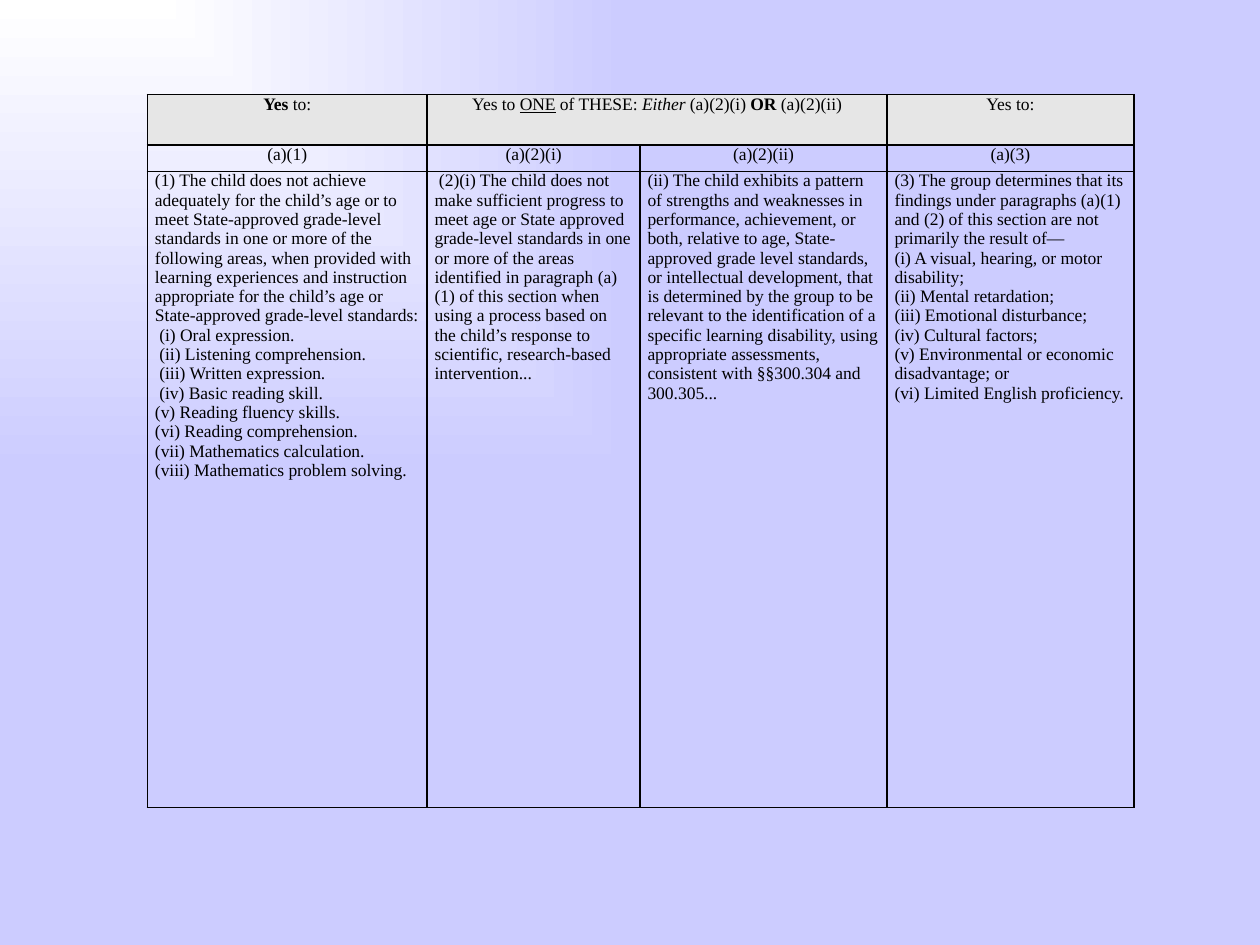
from dataclasses import dataclass

from pptx import Presentation
from pptx.dml.color import RGBColor
from pptx.enum.text import MSO_ANCHOR, PP_ALIGN
from pptx.oxml import parse_xml
from pptx.util import Inches, Pt

CENTER, LEFT = PP_ALIGN.CENTER, PP_ALIGN.LEFT
TOP = MSO_ANCHOR.TOP
NS = 'xmlns:a="http://schemas.openxmlformats.org/drawingml/2006/main"'
NS_P = 'xmlns:p="http://schemas.openxmlformats.org/presentationml/2006/main"'


@dataclass(frozen=True)
class Theme:
    font: str = "Times New Roman"
    size: float = 10
    text: str = "000000"
    border: str = "000000"
    border_pt: float = 1
    header: str = "E6E6E6"
    glow: str = "FFFFFF"
    back: str = "CCCCFF"


theme = Theme()


def add_text(p, text, bold=False, italic=False, underline=False):
    r = p.add_run()
    r.text = text
    f = r.font
    f.name, f.size = theme.font, Pt(theme.size)
    f.color.rgb = RGBColor.from_string(theme.text)
    f.bold, f.italic, f.underline = bold, italic, underline


def set_borders(cell):
    tcPr = cell._tc.get_or_add_tcPr()
    for i, side in enumerate("LRTB"):
        tcPr.insert(i, parse_xml(
            f'<a:ln{side} {NS} w="{Pt(theme.border_pt)}"><a:solidFill>'
            f'<a:srgbClr val="{theme.border}"/></a:solidFill></a:ln{side}>'))


# Each header is a list of (text, format) runs
headers = [
    [("Yes", {"bold": True}), (" to:", {})],
    [("Yes to ", {}), ("ONE", {"underline": True}), (" of THESE: ", {}),
     ("Either", {"italic": True}), (" (a)(2)(i) ", {}),
     ("OR", {"bold": True}), (" (a)(2)(ii)", {})],
    [],
    [("Yes to:", {})],
]
sections = ["(a)(1)", "(a)(2)(i)", "(a)(2)(ii)", "(a)(3)"]
criteria = [
    ["(1) The child does not achieve adequately for the child’s age or to meet "
     "State-approved grade-level standards in one or more of the following areas, "
     "when provided with learning experiences and instruction appropriate for the "
     "child’s age or State-approved grade-level standards:",
     " (i) Oral expression.",
     " (ii) Listening comprehension.",
     " (iii) Written expression.",
     " (iv) Basic reading skill.",
     "(v) Reading fluency skills.",
     "(vi) Reading comprehension.",
     "(vii) Mathematics calculation.",
     "(viii) Mathematics problem solving."],
    [" (2)(i) The child does not make sufficient progress to meet age or State "
     "approved grade-level standards in one or more of the areas identified in "
     "paragraph (a)(1) of this section when using a process based on the child’s "
     "response to scientific, research-based intervention..."],
    ["(ii) The child exhibits a pattern of strengths and weaknesses in performance, "
     "achievement, or both, relative to age, State-approved grade level standards, "
     "or intellectual development, that is determined by the group to be relevant "
     "to the identification of a specific learning disability, using appropriate "
     "assessments, consistent with §§300.304 and 300.305..."],
    ["(3) The group determines that its findings under paragraphs (a)(1) and (2) of "
     "this section are not primarily the result of—",
     "(i) A visual, hearing, or motor disability;",
     "(ii) Mental retardation;",
     "(iii) Emotional disturbance;",
     "(iv) Cultural factors;",
     "(v) Environmental or economic disadvantage; or",
     "(vi) Limited English proficiency."],
]
# rows > cells > paragraphs > runs
rows = [
    [[runs] for runs in headers],
    [[[(label, {})]] for label in sections],
    [[[(line, {})] for line in lines] for lines in criteria],
]
col_widths = [2.22, 1.69, 1.96, 1.96]
row_heights = [0.4, 0.21, 5.05]

prs = Presentation()
prs.slide_width, prs.slide_height = Inches(10), Inches(7.5)
s = prs.slides.add_slide(prs.slide_layouts[6])

# Background glow spreading from the top left corner
s.element.cSld.insert(0, parse_xml(
    f'<p:bg {NS_P} {NS}><p:bgPr><a:gradFill rotWithShape="0"><a:gsLst>'
    f'<a:gs pos="0"><a:srgbClr val="{theme.glow}"/></a:gs>'
    f'<a:gs pos="100000"><a:srgbClr val="{theme.back}"/></a:gs></a:gsLst>'
    '<a:path path="rect"><a:fillToRect r="100000" b="100000"/></a:path>'
    '</a:gradFill><a:effectLst/></p:bgPr></p:bg>'))

table = s.shapes.add_table(
    len(rows), len(col_widths), Inches(1.17), Inches(0.75),
    Inches(sum(col_widths)), Inches(sum(row_heights))).table
table.first_row = table.horz_banding = False
for col, width in zip(table.columns, col_widths):
    col.width = Inches(width)
for row, height in zip(table.rows, row_heights):
    row.height = Inches(height)
table.cell(0, 1).merge(table.cell(0, 2))

for i, row in enumerate(rows):
    for j, paragraphs in enumerate(row):
        cell = table.cell(i, j)
        cell.margin_left = cell.margin_right = Inches(0.06)
        cell.margin_top = cell.margin_bottom = 0
        cell.vertical_anchor = TOP
        if i == 0:
            cell.fill.solid()
            cell.fill.fore_color.rgb = RGBColor.from_string(theme.header)
        else:
            cell.fill.background()
        set_borders(cell)
        tf = cell.text_frame
        for k, runs in enumerate(paragraphs):
            p = tf.add_paragraph() if k else tf.paragraphs[0]
            p.alignment = LEFT if i == 2 else CENTER
            if i < 2:
                p.space_before, p.space_after = Pt(3), Pt(7.2)
            for text, style in runs:
                add_text(p, text, **style)

prs.save("out.pptx")
